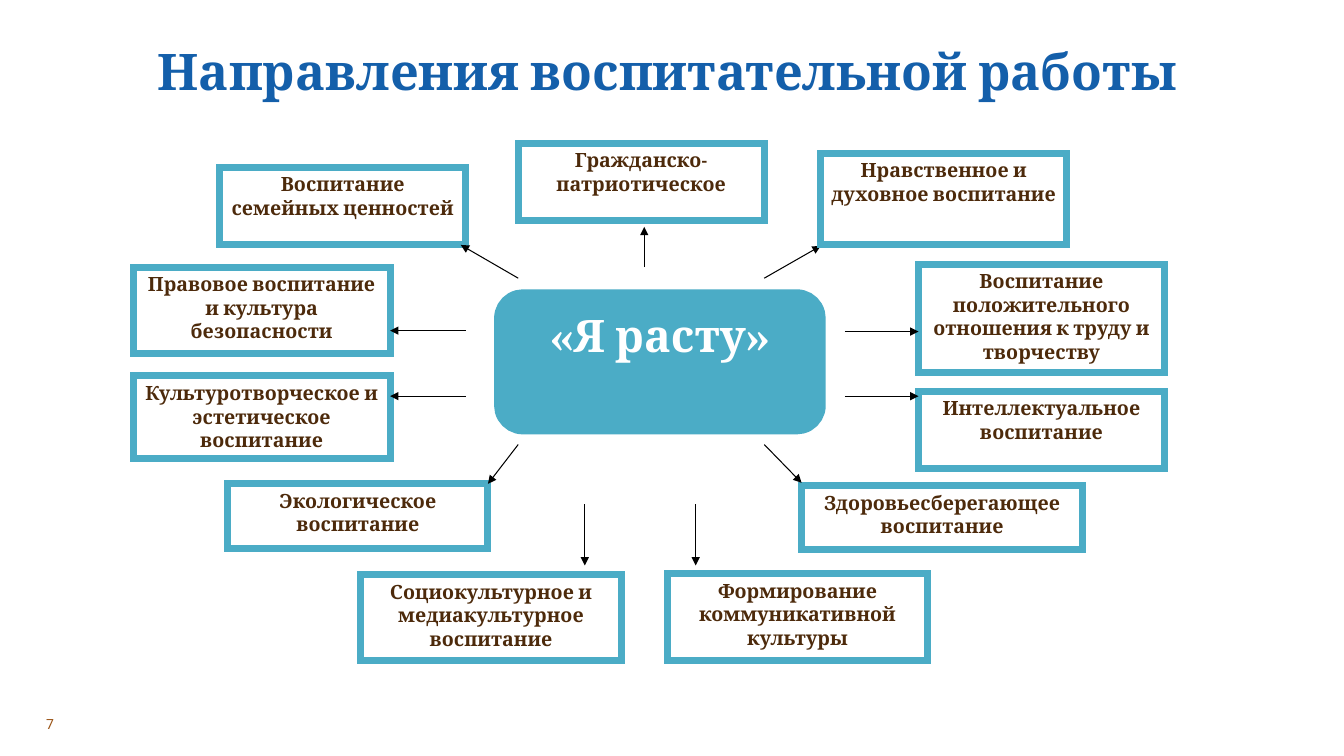
from dataclasses import dataclass

from lxml import etree
from pptx import Presentation
from pptx.dml.color import RGBColor
from pptx.enum.shapes import MSO_CONNECTOR, MSO_SHAPE
from pptx.enum.text import MSO_ANCHOR, PP_ALIGN
from pptx.oxml.ns import qn
from pptx.util import Emu, Pt

EMU_PER_PX = 9144  # 100 px to the inch
SLIDE_SIZE = (1333, 750)
BLANK_LAYOUT = 6

RECTANGLE = MSO_SHAPE.RECTANGLE
ROUNDED_BLOCK = MSO_SHAPE.FLOWCHART_ALTERNATE_PROCESS
STRAIGHT = MSO_CONNECTOR.STRAIGHT
CENTER, LEFT = PP_ALIGN.CENTER, PP_ALIGN.LEFT
TOP, MIDDLE, BOTTOM = MSO_ANCHOR.TOP, MSO_ANCHOR.MIDDLE, MSO_ANCHOR.BOTTOM


@dataclass(frozen=True)
class Theme:
    title_blue: str = "145FAA"
    teal: str = "4BACC6"
    brown: str = "4D2A0B"
    number_brown: str = "9A5315"
    white: str = "FFFFFF"
    black: str = "000000"
    heading_font: str = "Cambria"
    number_font: str = "Roboto"
    title_size: int = 36
    center_size: int = 32
    label_size: int = 14
    number_size: int = 10
    box_line: float = 5
    center_line: float = 10
    arrow_line: float = 0.75


THEME = Theme()

# Text, then left, top, width, height
DIRECTIONS = (
    ("Правовое воспитание и культура безопасности", (132, 265, 255, 86)),
    ("Культуротворческое и эстетическое воспитание", (132, 373, 255, 82)),
    ("Социокультурное и медиакультурное воспитание", (358, 570, 258, 85)),
    ("Воспитание семейных ценностей", (218, 166, 244, 77)),
    ("Воспитание положительного отношения к труду и творчеству", (911, 262, 244, 108)),
    ("Интеллектуальное воспитание", (911, 388, 244, 77)),
    ("Здоровьесберегающее воспитание", (795, 482, 279, 63)),
    ("Гражданско-патриотическое", (514, 142, 244, 77)),
    ("Экологическое воспитание", (226, 480, 258, 64)),
    ("Формирование коммуникативной культуры", (662, 569, 258, 86)),
)
MORAL_DIRECTION = ("Нравственное и духовное воспитание", (814, 152, 244, 91))

# Start x, y and end x, y
ARROWS = (
    (639, 265, 639, 225),
    (838, 329, 911, 329),
    (838, 393, 911, 393),
    (462, 328, 387, 328),
    (462, 393, 387, 393),
    (580, 500, 580, 561),
    (690, 500, 690, 561),
    (758, 276, 814, 244),
    (514, 276, 457, 243),
    (758, 441, 795, 479),
    (514, 441, 484, 480),
)


def px(*lengths):
    return [Emu(length * EMU_PER_PX) for length in lengths]


def rgb(color):
    return RGBColor.from_string(color)


def write_text(shape, text, *, size, color, font=THEME.heading_font, bold=True,
               align=CENTER, anchor=TOP, line_spacing=None):
    frame = shape.text_frame
    frame.word_wrap = True
    frame.vertical_anchor = anchor
    paragraph = frame.paragraphs[0]
    paragraph.alignment = align
    if line_spacing:
        paragraph.line_spacing = line_spacing
    run = paragraph.add_run()
    run.text = text
    run.font.name = font
    run.font.size = Pt(size)
    run.font.bold = bold
    run.font.color.rgb = rgb(color)


def add_label(slide, text, place, **text_format):
    write_text(slide.shapes.add_textbox(*px(*place)), text, **text_format)


def add_block(slide, text, place, *, preset=RECTANGLE, fill=THEME.white,
              line_width=THEME.box_line, size=THEME.label_size, color=THEME.brown):
    """Add a teal-edged shape with sharp line joins and bold text."""
    shape = slide.shapes.add_shape(preset, *px(*place))
    shape.shadow.inherit = False
    shape.fill.solid()
    shape.fill.fore_color.rgb = rgb(fill)
    shape.line.color.rgb = rgb(THEME.teal)
    shape.line.width = Pt(line_width)
    outline = shape._element.spPr.find(qn("a:ln"))
    etree.SubElement(outline, qn("a:miter"), lim="800000")
    write_text(shape, text, size=size, color=color)


def add_arrow(slide, ends):
    arrow = slide.shapes.add_connector(STRAIGHT, *px(*ends))
    arrow.line.color.rgb = rgb(THEME.black)
    arrow.line.width = Pt(THEME.arrow_line)
    properties = arrow._element.spPr
    etree.SubElement(properties.find(qn("a:ln")), qn("a:tailEnd"), type="triangle")
    etree.SubElement(properties, qn("a:effectLst"))


def main():
    presentation = Presentation()
    presentation.slide_width, presentation.slide_height = px(*SLIDE_SIZE)
    slide = presentation.slides.add_slide(presentation.slide_layouts[BLANK_LAYOUT])

    add_label(slide, "Направления воспитательной работы", (112, 23, 1100, 83),
              size=THEME.title_size, color=THEME.title_blue, anchor=BOTTOM,
              line_spacing=0.9)
    add_label(slide, "7", (36, 706, 83, 25), size=THEME.number_size,
              color=THEME.number_brown, font=THEME.number_font, bold=False,
              align=LEFT, anchor=MIDDLE)

    for text, place in DIRECTIONS:
        add_block(slide, text, place)
    for ends in ARROWS:
        add_arrow(slide, ends)
    add_block(slide, *MORAL_DIRECTION)
    add_block(slide, "«Я расту»", (497, 294, 315, 130), preset=ROUNDED_BLOCK,
              fill=THEME.teal, line_width=THEME.center_line,
              size=THEME.center_size, color=THEME.white)

    presentation.save("out.pptx")


if __name__ == "__main__":
    main()
